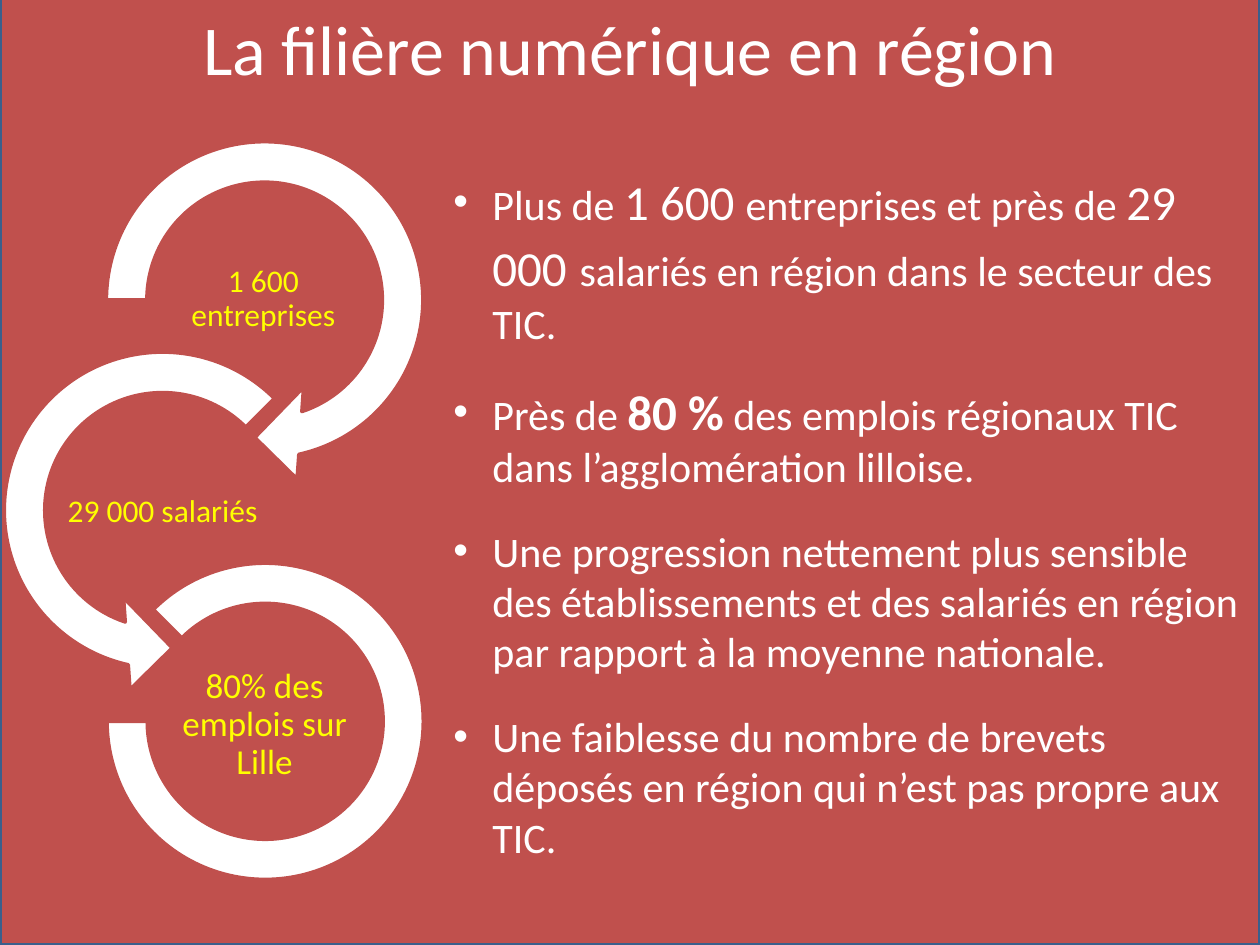
from lxml import etree
from pptx import Presentation
from pptx.dml.color import RGBColor
from pptx.enum.shapes import MSO_SHAPE
from pptx.enum.text import MSO_ANCHOR, PP_ALIGN
from pptx.oxml.ns import qn
from pptx.util import Inches, Pt

RECTANGLE = MSO_SHAPE.RECTANGLE
RIGHT_ARROW_RING = MSO_SHAPE.CIRCULAR_ARROW
LEFT_ARROW_RING = MSO_SHAPE.LEFT_CIRCULAR_ARROW
OPEN_RING = MSO_SHAPE.BLOCK_ARC
CENTER = PP_ALIGN.CENTER
MIDDLE = MSO_ANCHOR.MIDDLE

FONT = "Calibri"
RED, BLUE, WHITE, YELLOW = "C0504D", "3A5F8C", "FFFFFF", "FFFF00"
CAPTION_SIZE = (1.62, 0.81)

# Ring shape, position, diameter, adjustments; caption, position, font size
RINGS = [
    (RIGHT_ARROW_RING, (0.64, 0.92), 2.92, (0.11, 11.42, 45, 108, 0.125),
     "1 600 entreprises", (1.28, 1.97), 18),
    (LEFT_ARROW_RING, (-0.17, 2.59), 2.92, (0.11, 11.42, 63, 189, 0.125),
     "29 000 salariés", (0.48, 3.66), 18),
    (OPEN_RING, (0.85, 4.47), 2.51, (135, 108, 0.127),
     "80% des emplois sur Lille", (1.29, 5.35), 20),
]

# Each point is a list of (text, size, bold)
POINTS = [
    [("Plus de ", 24, False), ("1 600 ", 28, False),
     ("entreprises et près de ", 24, False), ("29 000", 28, False),
     (" ", 32, True), ("salariés en région dans le secteur des TIC.", 24, False)],
    [("Près de ", 24, False), ("80 %", 28, True),
     (" des emplois régionaux TIC dans l’agglomération lilloise.", 24, False)],
    [("Une progression nettement plus sensible des établissements et des "
      "salariés en région par rapport à la moyenne nationale.", 24, False)],
    [("Une faiblesse du nombre de brevets déposés en région qui n’est pas "
      "propre aux TIC.", 24, False)],
]


def rgb(color):
    return RGBColor.from_string(color)


def add_figure(shapes, preset, box, fill, line, adjustments=()):
    figure = shapes.add_shape(preset, *map(Inches, box))
    figure.shadow.inherit = False
    figure.fill.solid()
    figure.fill.fore_color.rgb = rgb(fill)
    figure.line.color.rgb = rgb(line)
    figure.line.width = Pt(2)
    for index, value in enumerate(adjustments):
        figure.adjustments[index] = value


def add_text_frame(shapes, box):
    frame = shapes.add_textbox(*map(Inches, box)).text_frame
    frame.word_wrap = True
    return frame


def style_paragraph(paragraph, size, color):
    paragraph.font.name = FONT
    paragraph.font.size = Pt(size)
    paragraph.font.color.rgb = rgb(color)


def add_centered_text(shapes, box, text, size, color):
    frame = add_text_frame(shapes, box)
    frame.vertical_anchor = MIDDLE
    paragraph = frame.paragraphs[0]
    paragraph.text = text
    paragraph.alignment = CENTER
    style_paragraph(paragraph, size, color)
    return frame


def add_caption(shapes, position, text, size):
    frame = add_centered_text(shapes, position + CAPTION_SIZE, text, size, YELLOW)
    frame.margin_left = frame.margin_right = Inches(0.01)
    frame.margin_top = frame.margin_bottom = Inches(0.01)
    frame.paragraphs[0].line_spacing = 0.9


def set_bullet(paragraph):
    properties = paragraph._p.get_or_add_pPr()
    properties.set("marL", str(Inches(0.31)))
    properties.set("indent", str(-Inches(0.31)))
    bullet_font = etree.Element(qn("a:buFont"), typeface="Arial")
    bullet = etree.Element(qn("a:buChar"), char="•")
    default_run = properties.find(qn("a:defRPr"))
    default_run.addprevious(bullet_font)
    default_run.addprevious(bullet)


def add_points(shapes, box, points):
    frame = add_text_frame(shapes, box)
    for index, parts in enumerate(points):
        paragraph = frame.add_paragraph() if index else frame.paragraphs[0]
        if index:
            paragraph.space_before = Pt(19.5)
        style_paragraph(paragraph, 24, WHITE)
        set_bullet(paragraph)
        for text, size, bold in parts:
            run = paragraph.add_run()
            run.text = text
            run.font.size = Pt(size)
            run.font.bold = bold


def main():
    deck = Presentation()
    deck.slide_width, deck.slide_height = Inches(10), Inches(7.5)
    slide = deck.slides.add_slide(deck.slide_layouts[6])

    # Background panel
    add_figure(slide.shapes, RECTANGLE, (0, -0.1, 10, 7.6), RED, BLUE)

    # Key points and title
    add_points(slide.shapes, (3.5, 1.31, 6.5, 5.62), POINTS)
    add_centered_text(slide.shapes, (0, -0.01, 10, 0.77),
                      "La filière numérique en région", 40, WHITE)

    # Chain of rings with key figures
    chain = slide.shapes.add_group_shape().shapes
    for preset, position, diameter, adjustments, text, text_position, size in RINGS:
        add_figure(chain, preset, position + (diameter, diameter),
                   WHITE, RED, adjustments)
        add_caption(chain, text_position, text, size)

    deck.save("out.pptx")


if __name__ == "__main__":
    main()
